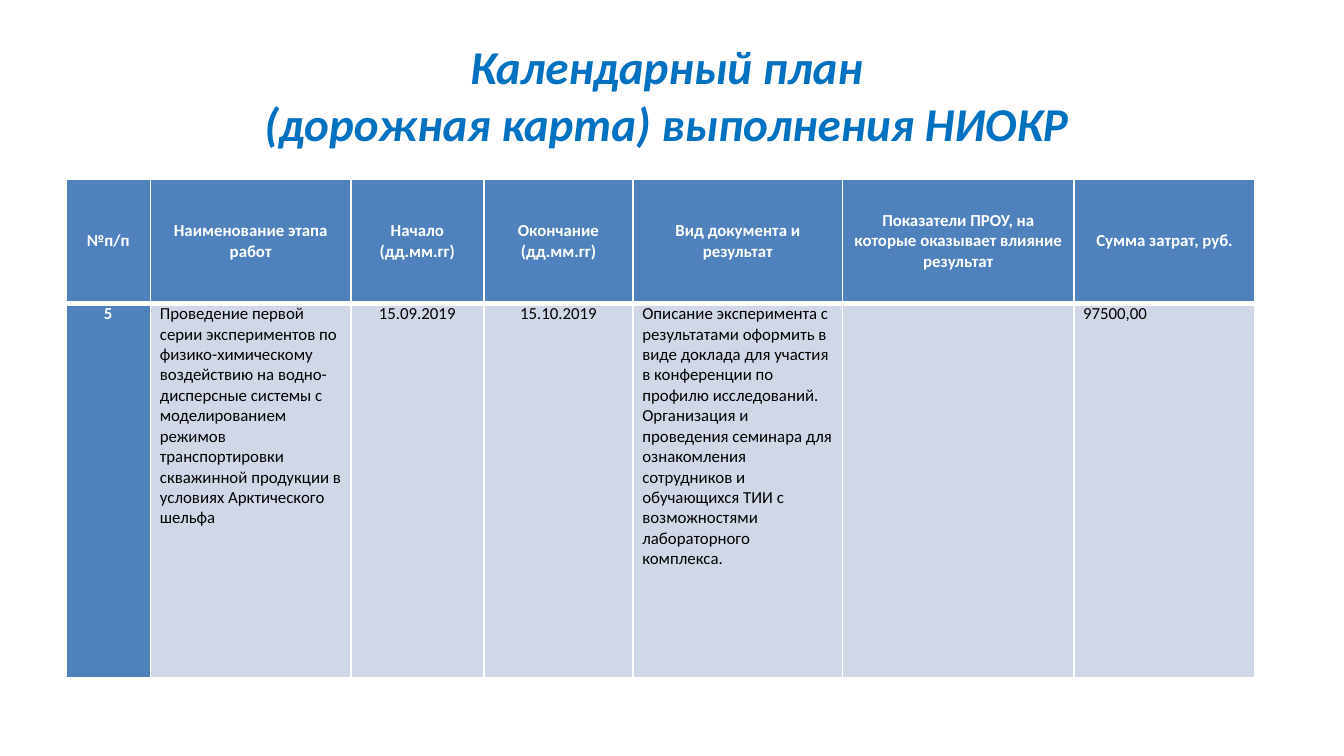
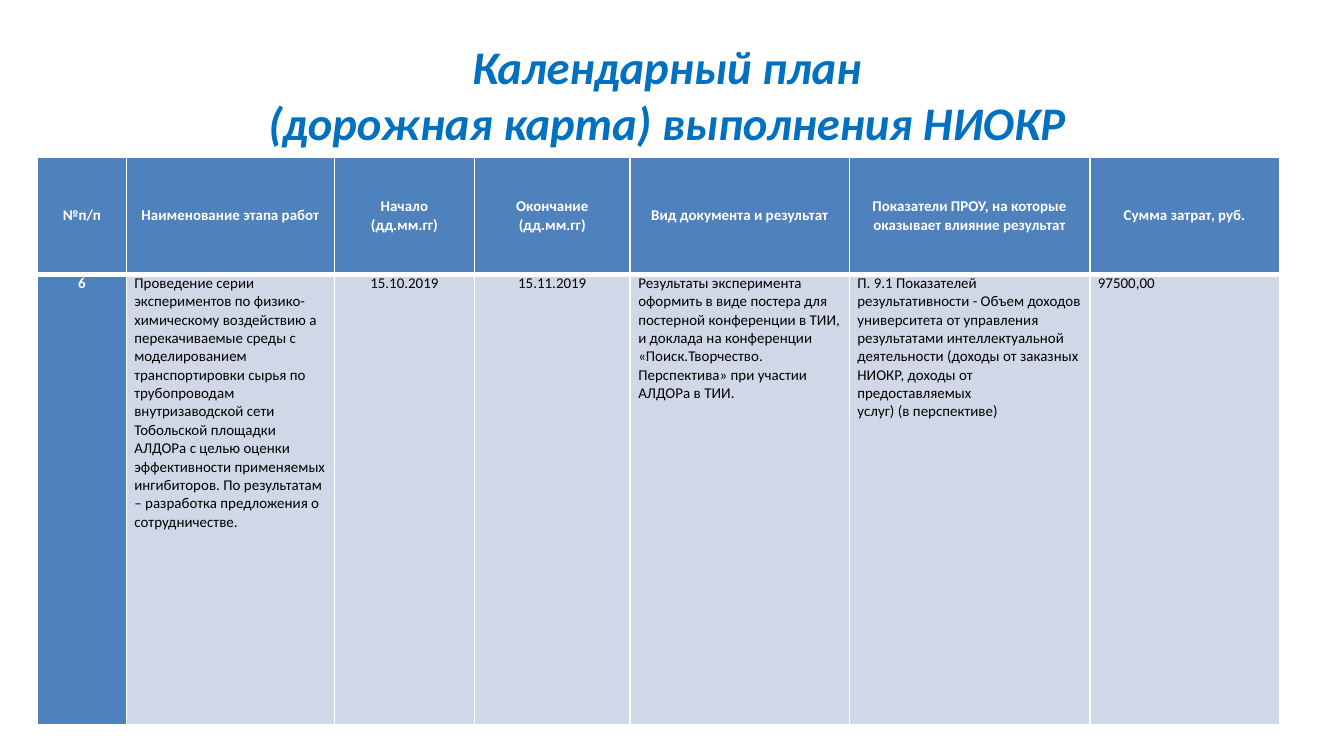
from lxml import etree
from pptx import Presentation
from pptx import util as u
from pptx.dml.color import RGBColor
from pptx.enum import text
from pptx.oxml.ns import qn

BLUE, PALE, TITLE_BLUE = "4F81BD", "D0D8E8", "0070C0"
WHITE, BLACK = "FFFFFF", "000000"
FONT = "Calibri"
LEFT, CENTER = text.PP_ALIGN.LEFT, text.PP_ALIGN.CENTER
TOP, MIDDLE = text.MSO_ANCHOR.TOP, text.MSO_ANCHOR.MIDDLE

TITLE = "Календарный план \v(дорожная карта) выполнения НИОКР "
HEADERS = [
    "№п/п",
    "Наименование этапа работ",
    "Начало\n(дд.мм.гг)",
    "Окончание\n(дд.мм.гг)",
    "Вид документа и результат",
    "Показатели ПРОУ, на которые оказывает влияние результат",
    "Сумма затрат, руб.",
]
CENTERED_COLUMNS = (0, 2, 3)


def color(value):
    return RGBColor.from_string(value)


def write(frame, content, size, fill=BLACK, bold=False, italic=False, align=LEFT):
    """Fill a text frame: \\n starts a paragraph, \\v breaks a line."""
    for index, line in enumerate(content.split("\n")):
        paragraph = frame.add_paragraph() if index else frame.paragraphs[0]
        paragraph.text = line
        paragraph.alignment = align
        for run in paragraph.runs:
            font = run.font
            font.name, font.size = FONT, u.Pt(size)
            font.bold, font.italic = bold, italic
            font.color.rgb = color(fill)


def set_borders(cell, top, bottom):
    properties = cell._tc.get_or_add_tcPr()
    for side, width in (("L", 1), ("R", 1), ("T", top), ("B", bottom)):
        line = etree.SubElement(properties, qn("a:ln" + side), w=str(u.Pt(width)))
        solid = etree.SubElement(line, qn("a:solidFill"))
        etree.SubElement(solid, qn("a:srgbClr"), val=WHITE)


class Deck:
    def __init__(self):
        self.presentation = Presentation()
        # Widescreen, 16:9
        self.presentation.slide_width = u.Inches(10)
        self.presentation.slide_height = u.Inches(10) * 9 // 16
        self.slide = None

    def add_slide(self):
        layout = self.presentation.slide_layouts[6]
        self.slide = self.presentation.slides.add_slide(layout)

    def add_title(self, size):
        box = self.slide.shapes.add_textbox(
            u.Inches(0.5), u.Inches(0.23), u.Inches(9), u.Inches(0.94))
        frame = box.text_frame
        frame.word_wrap = True
        frame.vertical_anchor = MIDDLE
        write(frame, TITLE, size, fill=TITLE_BLUE, bold=True, italic=True, align=CENTER)

    def add_plan(self, left, top, widths, heights, stage, size, margin):
        frame = self.slide.shapes.add_table(
            2, len(widths), u.Inches(left), u.Inches(top),
            u.Inches(sum(widths)), u.Inches(sum(heights)))
        table = frame.table
        table.horz_banding = False
        for column, width in zip(table.columns, widths):
            column.width = u.Inches(width)
        for row, height in zip(table.rows, heights):
            row.height = u.Inches(height)

        for row, contents in enumerate((HEADERS, stage)):
            header = row == 0
            for column, content in enumerate(contents):
                cell = table.cell(row, column)
                strong = header or column == 0
                cell.margin_left = cell.margin_right = u.Inches(margin)
                cell.margin_top = cell.margin_bottom = 0
                cell.vertical_anchor = MIDDLE if header else TOP
                # A thick rule separates the header from the stage
                set_borders(cell, *((1, 3) if header else (3, 1)))
                cell.fill.solid()
                cell.fill.fore_color.rgb = color(BLUE if strong else PALE)
                centered = header or column in CENTERED_COLUMNS
                write(cell.text_frame, content, size, bold=strong,
                      fill=WHITE if strong else BLACK,
                      align=CENTER if centered else LEFT)


def main():
    deck = Deck()

    # Stage 5
    deck.add_slide()
    deck.add_title(25.2)
    deck.add_plan(
        0.49, 1.33, [0.63, 1.49, 0.99, 1.11, 1.56, 1.72, 1.35], [0.93, 2.78],
        [
            "5",
            "Проведение первой серии экспериментов по физико-химическому "
            "воздействию на водно-дисперсные системы с моделированием режимов "
            "транспортировки скважинной продукции в условиях Арктического шельфа",
            "15.09.2019",
            "15.10.2019",
            "Описание эксперимента с результатами оформить в виде доклада для "
            "участия в конференции по профилю исследований.\n"
            "Организация и проведения семинара для ознакомления сотрудников и "
            "обучающихся ТИИ с возможностями лабораторного комплекса.",
            "",
            "97500,00",
        ],
        size=9, margin=0.07)

    # Stage 6
    deck.add_slide()
    deck.add_title(25)
    deck.add_plan(
        0.28, 1.17, [0.66, 1.55, 1.04, 1.16, 1.63, 1.79, 1.41], [0.87, 3.35],
        [
            "6",
            "Проведение серии экспериментов по физико-химическому воздействию а "
            "перекачиваемые среды с моделированием транспортировки сырья по "
            "трубопроводам внутризаводской сети Тобольской площадки АЛДОРа с "
            "целью оценки эффективности применяемых ингибиторов. По результатам "
            "– разработка предложения о сотрудничестве.",
            "15.10.2019",
            "15.11.2019",
            "Результаты эксперимента оформить в виде постера для постерной "
            "конференции в ТИИ, и доклада на конференции «Поиск.Творчество. "
            "Перспектива» при участии АЛДОРа в ТИИ.",
            "П. 9.1 Показателей результативности - Объем доходов университета "
            "от управления результатами интеллектуальной\n"
            "деятельности (доходы от заказных НИОКР, доходы от предоставляемых\n"
            "услуг) (в перспективе)",
            "97500,00",
        ],
        size=8, margin=0.06)

    deck.presentation.save("out.pptx")


if __name__ == "__main__":
    main()
